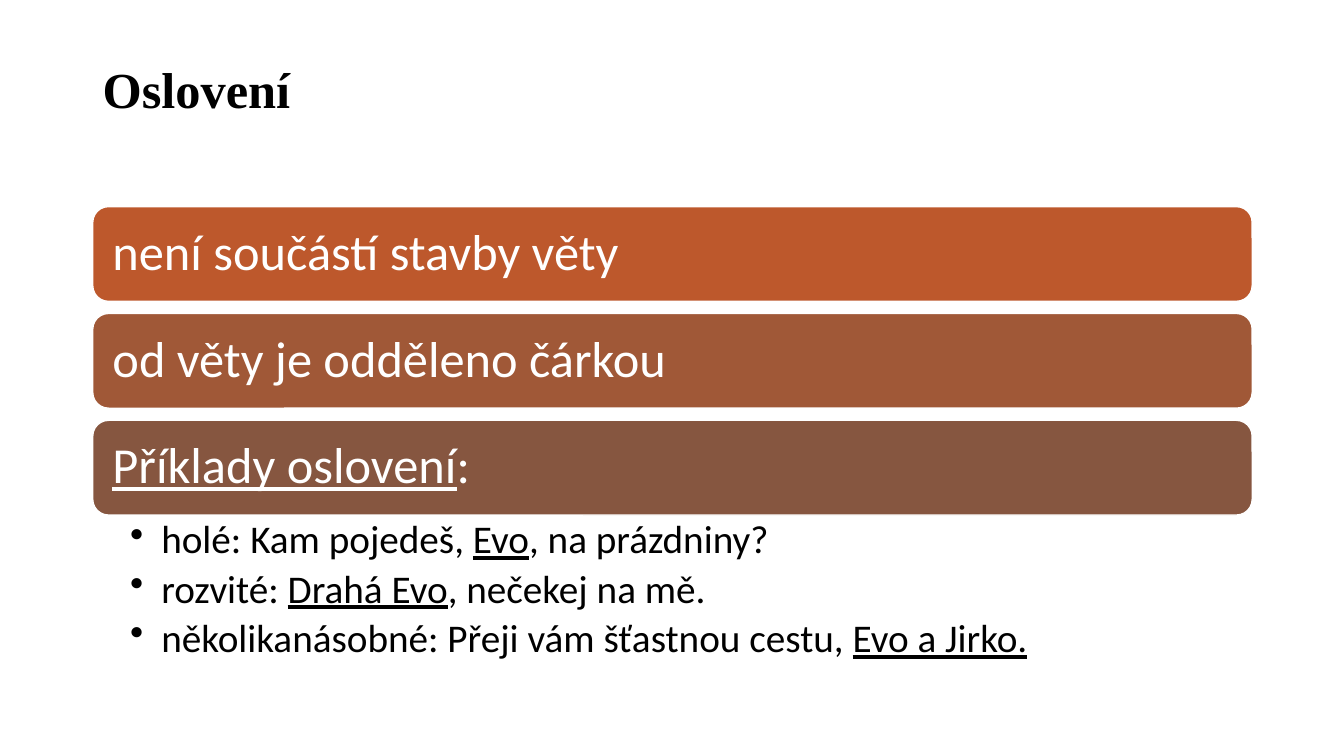
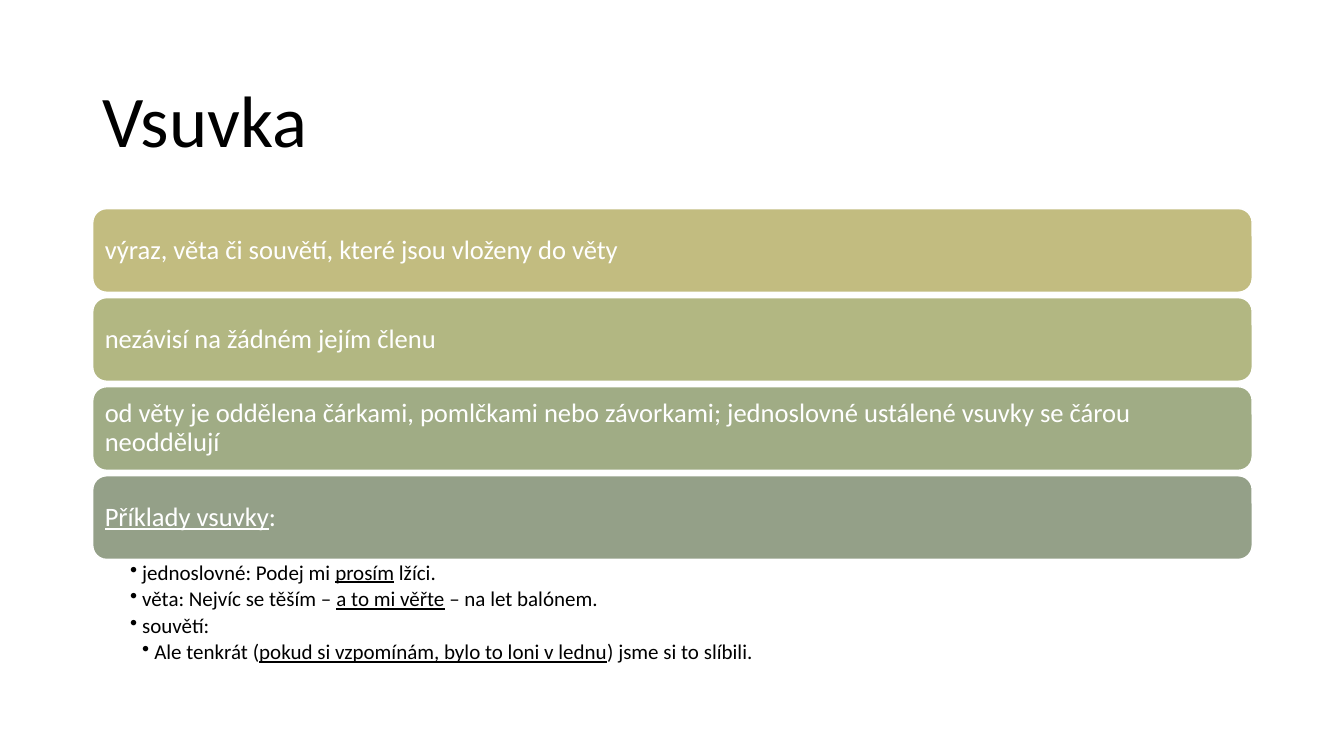
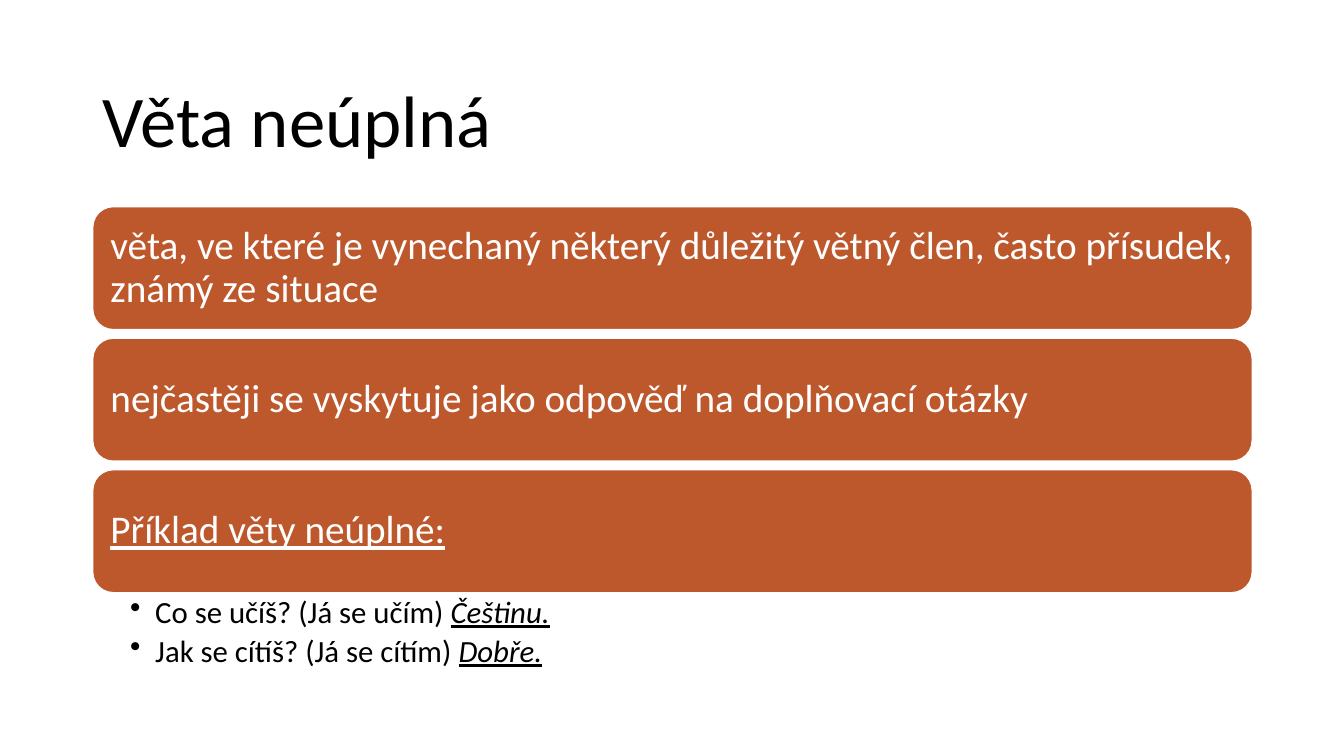
from dataclasses import dataclass, field

from lxml.etree import SubElement
from pptx import Presentation
from pptx.dml.color import RGBColor
from pptx.enum.shapes import MSO_SHAPE
from pptx.enum.text import MSO_ANCHOR, PP_ALIGN
from pptx.oxml.ns import qn
from pptx.util import Inches, Pt

BLACK, WHITE, ORANGE = "000000", "FFFFFF", "BD582C"
LEFT, WIDTH = 0.92, 11.5
LIST_BOTTOM = 6.7
LIST_INDENT = 0.37


@dataclass
class Title:
    text: str
    font: str = "Calibri"
    size: int = 52
    bold: bool = False
    bottom_margin: float = 0.05


@dataclass
class Bar:
    text: str
    fill: str = ORANGE


@dataclass
class Example:
    text: str
    level: int = 1


@dataclass
class Topic:
    """Content of one slide; underscores enclose emphasised words."""
    title: Title
    bars: list[Bar]
    bar_top: float
    bar_height: float
    bar_size: int
    examples: list[Example]
    list_top: float
    list_size: int
    hanging: float
    emphasis: dict = field(default_factory=lambda: {"underline": True})


TOPICS = [
    Topic(
        title=Title("Oslovení", "Times New Roman", 36, True, 0.67),
        bars=[
            Bar("není součástí stavby věty"),
            Bar("od věty je odděleno čárkou", "A05837"),
            Bar("_Příklady oslovení_:", "865640"),
        ],
        bar_top=2.05, bar_height=0.94, bar_size=36,
        examples=[
            Example("holé: Kam pojedeš, _Evo_, na prázdniny?"),
            Example("rozvité: _Drahá Evo_, nečekej na mě."),
            Example("několikanásobné: Přeji vám šťastnou cestu, _Evo a Jirko._"),
        ],
        list_top=5.11, list_size=28, hanging=0.31,
    ),
    Topic(
        title=Title("Vsuvka"),
        bars=[
            Bar("výraz, věta či souvětí, které jsou vloženy do věty", "C2BC80"),
            Bar("nezávisí na žádném jejím členu", "B2B782"),
            Bar("od věty je oddělena čárkami, pomlčkami nebo závorkami; "
                "jednoslovné ustálené vsuvky se čárou neoddělují", "A0AC85"),
            Bar("_Příklady vsuvky_:", "94A088"),
        ],
        bar_top=2.07, bar_height=0.83, bar_size=19,
        examples=[
            Example("jednoslovné: Podej mi _prosím_ lžíci."),
            Example("věta: Nejvíc se těším – _a to mi věřte_ – na let balónem."),
            Example("souvětí:"),
            Example("Ale tenkrát (_pokud si vzpomínám, bylo to loni v lednu_) "
                    "jsme si to slíbili.", 2),
        ],
        list_top=5.55, list_size=15, hanging=0.12,
    ),
    Topic(
        title=Title("Věta neúplná"),
        bars=[
            Bar("věta, ve které je vynechaný některý důležitý větný člen, "
                "často přísudek, známý ze situace"),
            Bar("nejčastěji se vyskytuje jako odpověď na doplňovací otázky"),
            Bar("_Příklad věty neúplné:_"),
        ],
        bar_top=2.05, bar_height=1.22, bar_size=28,
        examples=[
            Example("Co se učíš? (Já se učím) _Češtinu._"),
            Example("Jak se cítíš? (Já se cítím) _Dobře._"),
        ],
        list_top=5.88, list_size=22, hanging=0.25,
        emphasis={"underline": True, "italic": True},
    ),
]


def color(value: str) -> RGBColor:
    return RGBColor.from_string(value)


def apply_format(target, values: dict) -> None:
    for name, value in values.items():
        setattr(target, name, value)


def set_frame(frame, anchor, left: float, top: float, right: float, bottom: float) -> None:
    apply_format(frame, {
        "word_wrap": True, "vertical_anchor": anchor,
        "margin_left": Inches(left), "margin_top": Inches(top),
        "margin_right": Inches(right), "margin_bottom": Inches(bottom),
    })


def write(paragraph, text: str, values: dict, font_color: str, emphasis: dict) -> None:
    """Fill a paragraph, giving the emphasis to words between underscores."""
    apply_format(paragraph, {"line_spacing": 0.9, "alignment": PP_ALIGN.LEFT})
    for index, part in enumerate(text.split("_")):
        if part:
            run = paragraph.add_run()
            run.text = part
            apply_format(run.font, values | (emphasis if index % 2 else {}))
            run.font.color.rgb = color(font_color)


def add_bullet(paragraph, left: float, hanging: float) -> None:
    properties = paragraph._p.get_or_add_pPr()
    properties.set("marL", str(Inches(left)))
    properties.set("indent", str(-Inches(hanging)))
    SubElement(properties, qn("a:buChar")).set("char", "•")


def add_title(slide, title: Title) -> None:
    box = slide.shapes.add_textbox(Inches(LEFT), Inches(0.61), Inches(WIDTH), Inches(1.24))
    set_frame(box.text_frame, MSO_ANCHOR.MIDDLE, 0.1, 0.05, 0.1, title.bottom_margin)
    values = {"name": title.font, "size": Pt(title.size), "bold": title.bold}
    write(box.text_frame.paragraphs[0], title.text, values, BLACK, {})


def add_bars(slide, topic: Topic) -> None:
    """Spread the bars evenly so that the last one ends where the list starts."""
    room = topic.list_top - topic.bar_height - topic.bar_top
    pitch = room / (len(topic.bars) - 1)
    margin = topic.bar_size / 240
    values = {"name": "Calibri", "size": Pt(topic.bar_size)}
    for index, bar in enumerate(topic.bars):
        shape = slide.shapes.add_shape(
            MSO_SHAPE.ROUNDED_RECTANGLE, Inches(LEFT),
            Inches(topic.bar_top + index * pitch), Inches(WIDTH), Inches(topic.bar_height))
        shape.shadow.inherit = False
        shape.fill.solid()
        shape.fill.fore_color.rgb = color(bar.fill)
        shape.line.color.rgb = color(WHITE)
        shape.line.width = Pt(1)
        set_frame(shape.text_frame, MSO_ANCHOR.MIDDLE, margin, margin, margin, margin)
        write(shape.text_frame.paragraphs[0], bar.text, values, WHITE, {"underline": True})


def add_examples(slide, topic: Topic) -> None:
    box = slide.shapes.add_textbox(
        Inches(LEFT), Inches(topic.list_top), Inches(WIDTH),
        Inches(LIST_BOTTOM - topic.list_top))
    frame = box.text_frame
    margin = topic.list_size / 560
    set_frame(frame, MSO_ANCHOR.TOP, LIST_INDENT, margin, topic.list_size / 100, margin)
    values = {"name": "Calibri", "size": Pt(topic.list_size)}
    for index, example in enumerate(topic.examples):
        paragraph = frame.add_paragraph() if index else frame.paragraphs[0]
        paragraph.level = example.level
        paragraph.space_after = Pt(topic.list_size * 0.18)
        write(paragraph, example.text, values, BLACK, topic.emphasis)
        add_bullet(paragraph, example.level * topic.hanging, topic.hanging)


def main() -> None:
    presentation = Presentation()
    presentation.slide_width = Inches(13.33)
    presentation.slide_height = Inches(7.5)
    blank_layout = presentation.slide_layouts[6]
    for topic in TOPICS:
        slide = presentation.slides.add_slide(blank_layout)
        add_title(slide, topic.title)
        add_bars(slide, topic)
        add_examples(slide, topic)
    presentation.save("out.pptx")


if __name__ == "__main__":
    main()
